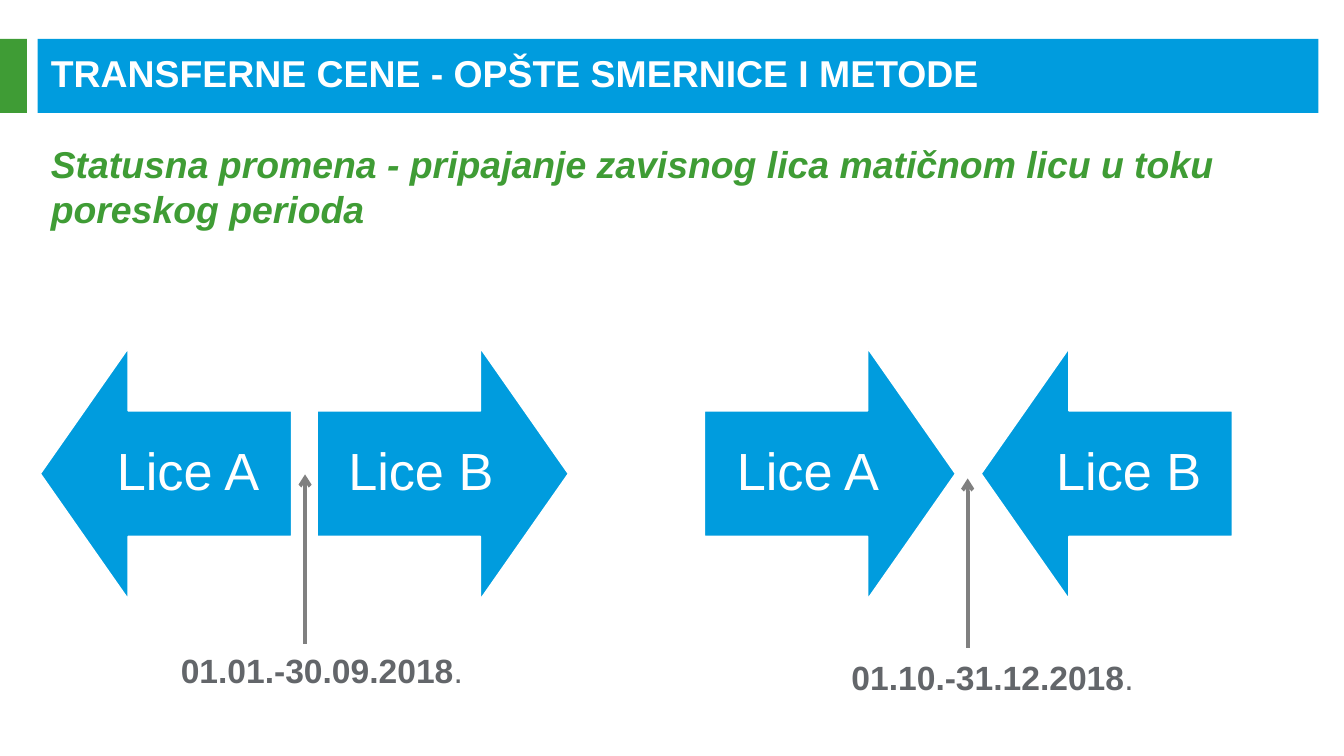
from pptx import Presentation
from pptx.dml.color import RGBColor
from pptx.enum.shapes import MSO_CONNECTOR, MSO_SHAPE
from pptx.enum.text import MSO_ANCHOR, PP_ALIGN
from pptx.oxml.ns import qn
from pptx.util import Inches, Pt
from lxml.etree import SubElement

COLS, ROWS = 1000, 562.5
CELL = Inches(10) // COLS
BLUE, GREEN, WHITE = "009CDE", "3F9C35", "FFFFFF"
SLATE, GRAY = "63666A", "808080"
SIDE, STEP = 187, 206


def grid(*cells):
    """Turn grid columns and rows into lengths."""
    return [int(cell * CELL) for cell in cells]


def paint(color, code):
    """Set a fill, line or font colour from a hex string."""
    color.rgb = RGBColor.from_string(code)


def style(run, size, code, bold=False, italic=False):
    """Format one run of text."""
    font = run.font
    font.name, font.size = "Arial", Pt(size)
    font.bold, font.italic = bold, italic
    paint(font.color, code)


def add_block(slide, kind, box, code):
    """Add a filled shape without outline or shadow."""
    shape = slide.shapes.add_shape(kind, *grid(*box))
    shape.shadow.inherit = False
    shape.fill.solid()
    paint(shape.fill.fore_color, code)
    shape.line.fill.background()
    return shape


def add_text(slide, box, text, size, code, italic=False):
    """Add a wrapped text box in bold and return its frame."""
    frame = slide.shapes.add_textbox(*grid(*box)).text_frame
    frame.word_wrap = True
    frame.text = text
    style(frame.paragraphs[0].runs[0], size, code, True, italic)
    return frame


def add_arrow(slide, kind, left, text):
    """Add a labelled block arrow."""
    shape = add_block(slide, kind, (left, 259, SIDE, SIDE), BLUE)
    shape.adjustments[0], shape.adjustments[1] = 0.5, 0.35
    shape.line.width = Pt(0.85)
    shape.line.fill.solid()
    paint(shape.line.color, WHITE)
    frame = shape.text_frame
    frame.text = text
    frame.word_wrap = True
    frame.vertical_anchor = MSO_ANCHOR.MIDDLE
    frame.margin_left = frame.margin_right = 22 * CELL
    frame.margin_top = frame.margin_bottom = 22 * CELL
    para = frame.paragraphs[0]
    para.alignment = PP_ALIGN.CENTER
    para.line_spacing = 0.9
    style(para.runs[0], 28, WHITE)


def add_pair(slide, left, kinds):
    """Add the arrows of both entities side by side."""
    for index, (kind, name) in enumerate(zip(kinds, "AB")):
        add_arrow(slide, kind, left + index * STEP, f"Lice {name}")


def add_date(slide, left, top, text):
    """Add a centred period label with a plain full stop."""
    frame = add_text(slide, (left, top, 237, 40), text, 18, SLATE)
    para = frame.paragraphs[0]
    para.alignment = PP_ALIGN.CENTER
    run = para.add_run()
    run.text = "."
    style(run, 18, SLATE)


def add_pointer(slide, col, foot):
    """Add a line that points up from a period label."""
    ends = grid(col, foot, col, foot - 126)
    link = slide.shapes.add_connector(MSO_CONNECTOR.STRAIGHT, *ends)
    link.line.width = Pt(2)
    paint(link.line.color, GRAY)
    props = link._element.spPr
    SubElement(props.find(qn("a:ln")), qn("a:tailEnd"), type="arrow")
    SubElement(props, qn("a:effectLst"))


def main():
    """Build the slide and save it."""
    deck = Presentation()
    deck.slide_width, deck.slide_height = grid(COLS, ROWS)
    slide = deck.slides.add_slide(deck.slide_layouts[6])

    add_block(slide, MSO_SHAPE.RECTANGLE, (28, 29, 953, 55), BLUE)
    add_block(slide, MSO_SHAPE.RECTANGLE, (0, 29, 20, 55), GREEN)
    title = add_text(slide, (28, 39, 945, 30),
                     "TRANSFERNE CENE - OPŠTE SMERNICE I METODE", 20, WHITE)
    title.vertical_anchor = MSO_ANCHOR.MIDDLE
    add_text(slide, (28, 100, 953, 53),
             "Statusna promena - pripajanje zavisnog lica matičnom licu "
             "u toku poreskog perioda", 20, GREEN, True)

    west, east = MSO_SHAPE.LEFT_ARROW, MSO_SHAPE.RIGHT_ARROW
    add_pair(slide, 524, (east, west))
    add_pair(slide, 30, (west, east))
    add_date(slide, 121, 479, "01.01.-30.09.2018")
    add_date(slide, 620, 484, "01.10.-31.12.2018")
    add_pointer(slide, 227, 479)
    add_pointer(slide, 720, 482)
    deck.save("out.pptx")


if __name__ == "__main__":
    main()
